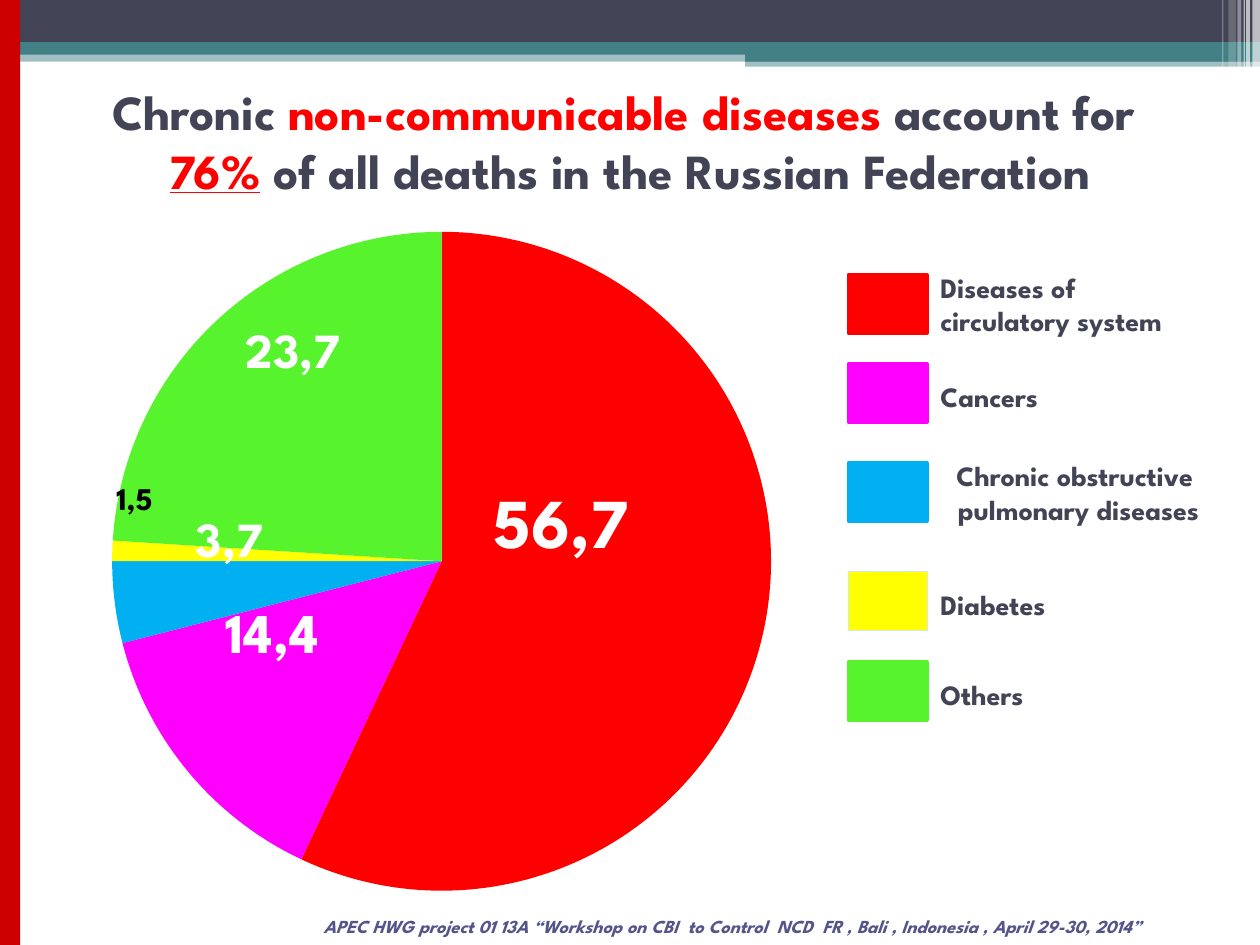
from dataclasses import dataclass

from lxml import etree
from pptx import Presentation
from pptx.chart.data import CategoryChartData
from pptx.dml.color import RGBColor
from pptx.enum.chart import XL_CHART_TYPE
from pptx.enum.shapes import MSO_SHAPE
from pptx.enum.text import MSO_ANCHOR, MSO_AUTO_SIZE, PP_ALIGN
from pptx.oxml.ns import qn
from pptx.util import Inches, Pt

PIE = XL_CHART_TYPE.PIE
RECT, ROUNDED = MSO_SHAPE.RECTANGLE, MSO_SHAPE.ROUNDED_RECTANGLE
MIDDLE = MSO_ANCHOR.MIDDLE
LEFT, CENTER = PP_ALIGN.LEFT, PP_ALIGN.CENTER
FIT = MSO_AUTO_SIZE.SHAPE_TO_FIT_TEXT


@dataclass(frozen=True)
class Theme:
    font: str = "League Spartan"
    chart_font: str = "TeX Gyre Schola"
    slate: str = "424456"
    teal: str = "438086"
    indigo: str = "53548A"
    white: str = "FFFFFF"
    black: str = "000000"
    crimson: str = "CC0000"
    red: str = "FF0000"
    magenta: str = "FF00FF"
    blue: str = "00B0F0"
    yellow: str = "FFFF00"
    green: str = "57F32D"
    pale: str = "D6E9EA"
    title: float = 28
    legend: float = 16
    footer: float = 10.5
    chart: float = 10


THEME = Theme()


def rgb(color):
    return RGBColor.from_string(color)


def add_text(paragraph, text, size=THEME.legend, color=THEME.slate,
             italic=False, underline=False):
    run = paragraph.add_run()
    run.text = text
    font = run.font
    font.name, font.size, font.bold = THEME.font, Pt(size), True
    font.italic, font.underline = italic, underline
    font.color.rgb = rgb(color)


class SlideBuilder:
    """Places elements on a grid of 100 columns by 75 rows."""

    def __init__(self, presentation, theme):
        self.theme = theme
        self.column = presentation.slide_width / 100
        self.row = presentation.slide_height / 75
        self.slide = presentation.slides.add_slide(presentation.slide_layouts[6])

    def box(self, left, top, width, height):
        return (round(left * self.column), round(top * self.row),
                round(width * self.column), round(height * self.row))

    def block(self, *place, fill, opacity=100, line=None, weight=1.5, form=RECT):
        shape = self.slide.shapes.add_shape(form, *self.box(*place))
        shape.shadow.inherit = False
        shape.fill.solid()
        shape.fill.fore_color.rgb = rgb(fill)
        if opacity < 100:
            color = shape.fill._xPr.find(".//" + qn("a:srgbClr"))
            etree.SubElement(color, qn("a:alpha"), val=str(opacity * 1000))
        if line:
            shape.line.color.rgb = rgb(line)
            shape.line.width = Pt(weight)
        else:
            shape.line.fill.background()
        return shape

    def heading(self, *place, lines):
        frame = self.block(*place, fill=self.theme.white).text_frame
        frame.word_wrap = True
        frame.vertical_anchor = MIDDLE
        for index, pieces in enumerate(lines):
            paragraph = frame.add_paragraph() if index else frame.paragraphs[0]
            paragraph.alignment = CENTER
            for text, style in pieces:
                add_text(paragraph, text, size=self.theme.title, **style)

    def label(self, *place, lines, align=LEFT, **style):
        frame = self.slide.shapes.add_textbox(*self.box(*place)).text_frame
        frame.word_wrap = False
        frame.auto_size = FIT
        for index, text in enumerate(lines):
            paragraph = frame.add_paragraph() if index else frame.paragraphs[0]
            paragraph.alignment = align
            add_text(paragraph, text, **style)

    def pie(self, *place, diameter, names, values, colors):
        data = CategoryChartData()
        data.categories = names
        data.add_series("Share of deaths, %", values)
        chart = self.slide.shapes.add_chart(PIE, *self.box(*place), data).chart
        chart.has_legend = chart.has_title = False
        chart.font.name = self.theme.chart_font
        chart.font.size = Pt(self.theme.chart)
        chart.font.color.rgb = rgb(self.theme.black)
        plot = chart.plots[0]
        plot.vary_by_categories = True
        for index, color in enumerate(colors):
            point = plot.series[0].points[index].format
            point.fill.solid()
            point.fill.fore_color.rgb = rgb(color)
            point.line.fill.background()
        self.center_plot(chart, diameter / place[2], diameter / place[3])

    def center_plot(self, chart, width, height):
        area = chart._chartSpace.find(".//" + qn("c:plotArea"))
        for old in area.findall(qn("c:layout")):
            area.remove(old)
        layout = etree.Element(qn("c:layout"))
        manual = etree.SubElement(layout, qn("c:manualLayout"))
        settings = {"layoutTarget": "inner", "xMode": "edge", "yMode": "edge",
                    "x": (1 - width) / 2, "y": (1 - height) / 2,
                    "w": width, "h": height}
        for tag, value in settings.items():
            etree.SubElement(manual, qn("c:" + tag), val=str(value))
        area.insert(0, layout)


def main():
    presentation = Presentation()
    presentation.slide_width, presentation.slide_height = Inches(10), Inches(7.5)
    page = SlideBuilder(presentation, THEME)
    t = THEME

    # Header bands
    page.block(0, 4, 100, 0.9, fill=t.teal, opacity=50)
    page.block(0, 0, 100, 3.35, fill=t.slate)
    page.block(0, 3.35, 100, 1, fill=t.teal)
    page.block(59.15, 3.9, 40.85, 1, fill=t.teal)
    page.block(59.15, 4.8, 40.85, 2, fill=t.teal, opacity=50)
    page.block(59.1, 5.4, 33.5, 0.3, fill=t.white, form=ROUNDED)

    # Light stripes in the corner
    stripes = [(99.4, 0.6, 6.8, 65), (98.9, 0.3, 6.8, 65), (98.7, 0.1, 6.8, 60),
               (98.2, 0.3, 6.8, 40), (97.5, 0.6, 6.4, 20), (97, 0.1, 6.4, 30)]
    for left, width, height, opacity in stripes:
        page.block(left, 0, width, height, fill=t.white, opacity=opacity)

    # Title
    page.heading(0, 5.3, 100, 11.7, lines=[
        [("Chronic ", {}), ("non-communicable diseases ", {"color": t.red}),
         ("account for ", {})],
        [("76%", {"color": t.red, "underline": True}),
         (" of all deaths in the Russian Federation", {})],
    ])

    # Causes of death: name lines, share, colour, swatch top, name top, name width
    causes = [
        (["Diseases of", "circulatory system"], 57, t.red, 21.8, 20.95, 21.8),
        (["Cancers"], 14, t.magenta, 28.85, 29.6, 11.8),
        (["Chronic obstructive ", "pulmonary diseases"], 4, t.blue, 36.7, 35.9, 23.9),
        (["Diabetes"], 1, t.yellow, 45.35, 46.15, 11.7),
        (["Others"], 24, t.green, 52.5, 53.25, 9.1),
    ]
    page.pie(6.7, 17, 56.7, 55.1, diameter=52.3,
             names=[" ".join(line.strip() for line in cause[0]) for cause in causes],
             values=[cause[1] for cause in causes],
             colors=[cause[2] for cause in causes])

    # Legend
    for lines, _, color, swatch_top, name_top, width in causes:
        is_yellow = color == t.yellow
        page.block(67.3, swatch_top, 6.3, 4.7, fill=color,
                   line=t.pale if is_yellow else color,
                   weight=0.25 if is_yellow else 1.5)
        page.label(73.65, name_top, width, 3.7 if len(lines) == 1 else 6.4,
                   lines=lines, align=CENTER if color == t.blue else LEFT)

    # Shares written on the pie
    shares = [("56,7", 38.2, 37.5, 13, 7.7, 40, t.white),
              ("14,4", 16.9, 46.9, 10.8, 6.4, 32, t.white),
              ("3,7", 14.55, 39.9, 7.5, 5.7, 28, t.white),
              ("1,5", 8.25, 37.5, 6, 4.4, 18, t.black),
              ("23,7", 18.5, 24.9, 9.7, 5.7, 28, t.white)]
    for text, left, top, width, height, size, color in shares:
        page.label(left, top, width, height, lines=[text], size=size, color=color)

    # Footer and side bar
    page.label(24.7, 72.15, 75.3, 2.8, size=t.footer, color=t.indigo, italic=True, lines=[
        "APEC HWG project 01 13A “Workshop on CBI  to Control  NCD  FR , "
        "Bali , Indonesia , April 29-30, 2014”"])
    page.block(0, 0, 1.6, 75, fill=t.crimson)

    presentation.save("out.pptx")


if __name__ == "__main__":
    main()
